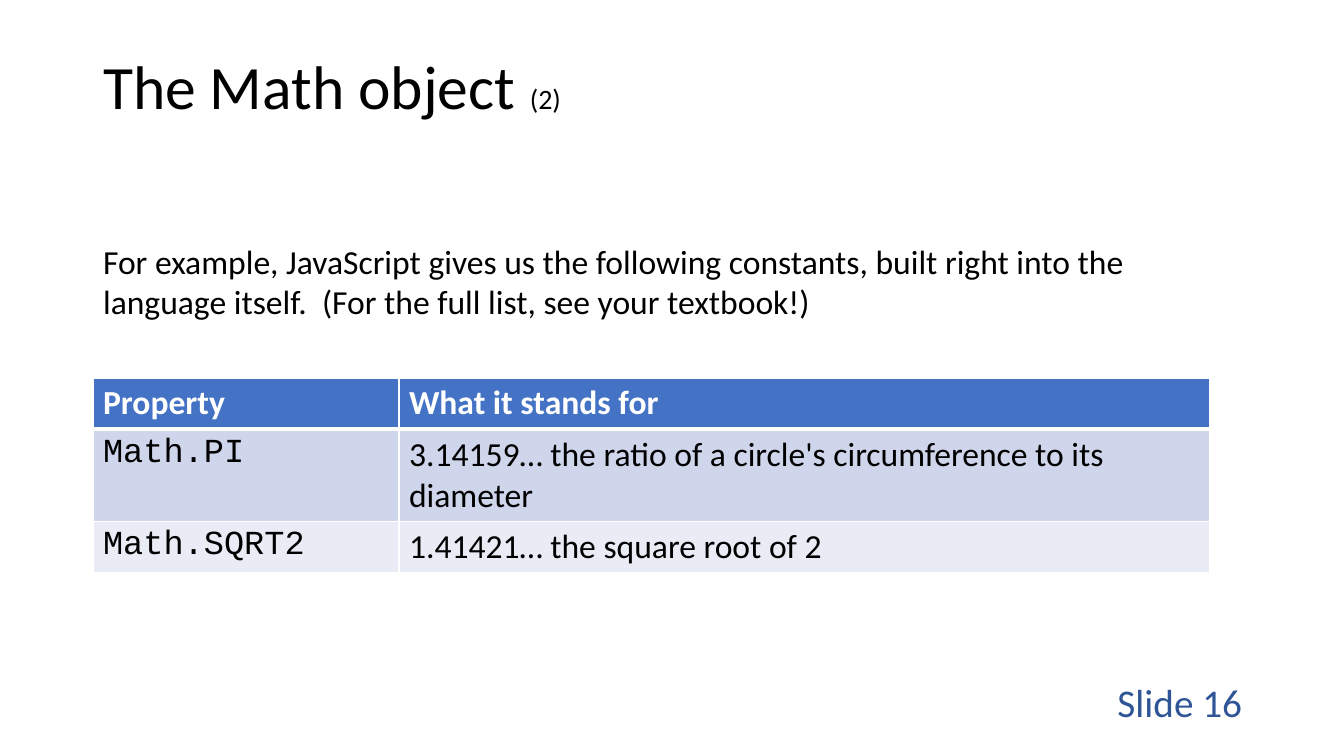
import pptx
import pptx.util
import pptx.dml.color
import pptx.enum.text
import pptx.oxml.ns
import lxml.etree

# Content
TITLE, TITLE_PART = "The Math object ", "(2)"
INTRO = ("For example, JavaScript gives us the following constants, built right "
         "into the language itself.  (For the full list, see your textbook!)")
NUMBER = "Slide 16"
ROWS = [
    ("Property", "What it stands for"),
    ("Math.PI", "3.14159… the ratio of a circle's circumference to its diameter"),
    ("Math.SQRT2", "1.41421… the square root of 2"),
]

THEME = {
    "font": "Calibri", "code": "Courier New",
    "text": "000000", "white": "FFFFFF", "number": "2F5597",
    "header": "4472C4", "bands": ("CFD5EA", "E9EBF5"),
    "title_size": 44, "part_size": 20, "body_size": 24, "number_size": 28,
}

# Layout in px
EMU_PER_PX = 914400 / 100.8
SLIDE_W, SLIDE_H = 1344, 756
LEFT, WIDTH = 93, 1159
TITLE_BOX = (LEFT, 17, WIDTH, 146)
INTRO_BOX = (LEFT, 236, WIDTH, 142)
NUMBER_BOX = (950, 681, 302, 41)
TABLE_TOP = 378
COLS, ROW_HEIGHTS = (306, 811), (50, 91, 50)

ANCHOR = pptx.enum.text.MSO_ANCHOR
ALIGN = pptx.enum.text.PP_ALIGN


def px(n):
    return pptx.util.Emu(round(n * EMU_PER_PX))


def place(sp, box):
    sp.left, sp.top, sp.width, sp.height = map(px, box)


def color(name):
    return pptx.dml.color.RGBColor.from_string(name)


def add_text(p, text, size=THEME["body_size"], font=THEME["font"],
             fill=THEME["text"], bold=False):
    r = p.add_run()
    r.text = text
    r.font.size = pptx.util.Pt(size)
    r.font.name = font
    r.font.bold = bold
    r.font.color.rgb = color(fill)


def setup(tf, anchor, align):
    tf.word_wrap = True
    tf.auto_size = pptx.enum.text.MSO_AUTO_SIZE.NONE
    tf.vertical_anchor = anchor
    p = tf.paragraphs[0]
    p.alignment = align
    p.space_before = pptx.util.Pt(0)
    return p


def set_borders(cell, **widths):
    qn = pptx.oxml.ns.qn
    tcPr = cell._tc.get_or_add_tcPr()
    for side in "LRTB":
        width = pptx.util.Pt(widths.get(side, 1))
        ln = lxml.etree.SubElement(tcPr, qn(f"a:ln{side}"), w=str(width))
        fill = lxml.etree.SubElement(ln, qn("a:solidFill"))
        lxml.etree.SubElement(fill, qn("a:srgbClr"), val=THEME["white"])


def main():
    prs = pptx.Presentation()
    prs.slide_width, prs.slide_height = px(SLIDE_W), px(SLIDE_H)
    s = prs.slides.add_slide(prs.slide_layouts[1])

    # Title
    sp = s.shapes.title
    place(sp, TITLE_BOX)
    p = setup(sp.text_frame, ANCHOR.MIDDLE, ALIGN.LEFT)
    p.line_spacing = 0.9
    add_text(p, TITLE, size=THEME["title_size"])
    add_text(p, TITLE_PART, size=THEME["part_size"])

    # Introduction, without a bullet
    sp = s.placeholders[1]
    place(sp, INTRO_BOX)
    p = setup(sp.text_frame, ANCHOR.TOP, ALIGN.LEFT)
    pPr = p._p.get_or_add_pPr()
    pPr.set("marL", "0")
    pPr.set("indent", "0")
    lxml.etree.SubElement(pPr, pptx.oxml.ns.qn("a:buNone"))
    add_text(p, INTRO)

    # Table of constants
    frame = s.shapes.add_table(len(ROWS), len(COLS), px(LEFT), px(TABLE_TOP),
                               px(sum(COLS)), px(sum(ROW_HEIGHTS)))
    table = frame.table
    for col, width in zip(table.columns, COLS):
        col.width = px(width)
    for i, (row, height) in enumerate(zip(ROWS, ROW_HEIGHTS)):
        table.rows[i].height = px(height)
        header = i == 0
        for j, text in enumerate(row):
            cell = table.cell(i, j)
            set_borders(cell, T=3 if i == 1 else 1, B=3 if header else 1)
            cell.fill.solid()
            cell.fill.fore_color.rgb = color(
                THEME["header"] if header else THEME["bands"][(i - 1) % 2])
            add_text(cell.text_frame.paragraphs[0], text, bold=header,
                     font=THEME["code"] if j == 0 and not header else THEME["font"],
                     fill=THEME["white"] if header else THEME["text"])

    # Slide number
    sp = s.shapes.add_textbox(*map(px, NUMBER_BOX))
    p = setup(sp.text_frame, ANCHOR.MIDDLE, ALIGN.RIGHT)
    add_text(p, NUMBER, size=THEME["number_size"], fill=THEME["number"])

    prs.save("out.pptx")


if __name__ == "__main__":
    main()
